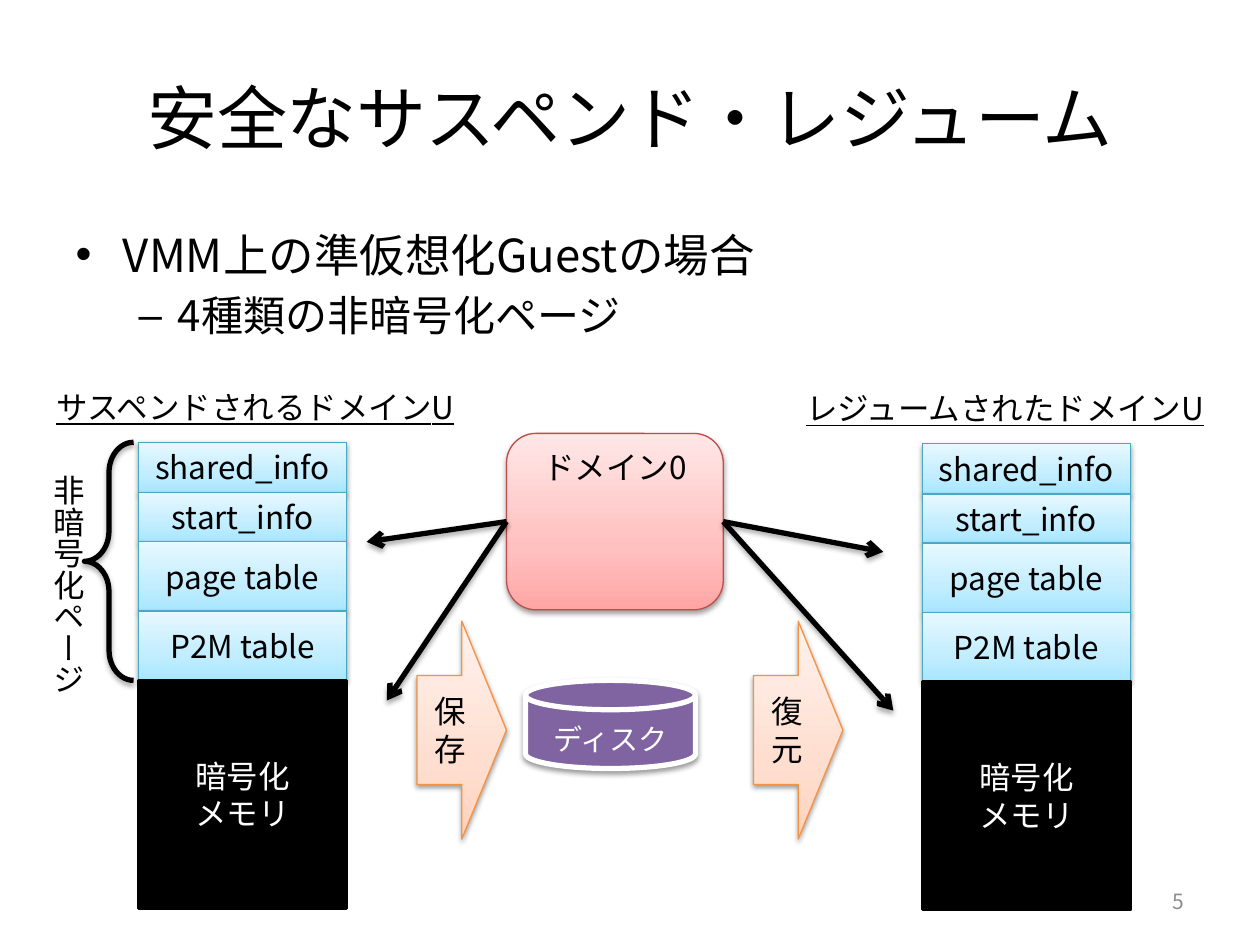
import pptx
import pptx.util
import pptx.dml.color
import pptx.enum.shapes
import pptx.enum.text
import pptx.oxml
import pptx.oxml.ns
from lxml import etree

Inches = pptx.util.Inches
Pt = pptx.util.Pt
SHAPE = pptx.enum.shapes.MSO_SHAPE
ALIGN = pptx.enum.text.PP_ALIGN
ANCHOR = pptx.enum.text.MSO_ANCHOR
qn = pptx.oxml.ns.qn

FONT = "Noto Sans CJK JP"
# Gradient stops run from bottom to top
BLUE = ("A7E6FF", "C1EDFF", "E7F8FF")
RED = ("FFA6A5", "FFC0BF", "FFE7E7")
ORANGE = ("FFD2BD", "FFDED0", "FFF2ED")
SHAPE_SHADOW = (38, 1.6)  # opacity in percent, distance in points
LINE_SHADOW = (35, 1.8)

MEMORY_ROWS = [("shared_info", 0.4), ("start_info", 0.39),
               ("page table", 0.55), ("P2M table", 0.55)]


def rgb(code):
    return pptx.dml.color.RGBColor.from_string(code)


def apply(target, values):
    for name, value in values.items():
        setattr(target, name, value)


def place(part, left, top, width, height):
    box = dict(left=left, top=top, width=width, height=height)
    apply(part, {side: Inches(length) for side, length in box.items()})


def write(paragraph, text, size=18, color="000000", align=None, underline=None):
    paragraph.text = text
    paragraph.alignment = align
    for run in paragraph.runs:
        apply(run.font, {"name": FONT, "size": Pt(size), "underline": underline})
        run.font.color.rgb = rgb(color)
        east_asian = etree.Element(qn("a:ea"), typeface=FONT)
        run.font._element.find(qn("a:latin")).addnext(east_asian)


def paint(fill, colors):
    """Fill with one colour, three gradient stops, or nothing."""
    if colors is None:
        fill.background()
    elif isinstance(colors, str):
        fill.solid()
        fill.fore_color.rgb = rgb(colors)
    else:
        fill.gradient()
        fill.gradient_angle = 90
        stops = fill._xPr.find(qn("a:gradFill")).find(qn("a:gsLst"))
        for stop in list(stops):
            stops.remove(stop)
        for position, color in zip((0, 35000, 100000), colors):
            stop = etree.SubElement(stops, qn("a:gs"), pos=str(position))
            etree.SubElement(stop, qn("a:srgbClr"), val=color)


def cast_shadow(effects, opacity, distance):
    shadow = etree.SubElement(effects, qn("a:outerShdw"), blurRad=str(Pt(3.1)),
                              dist=str(Pt(distance)), dir="5400000", rotWithShape="0")
    black = etree.SubElement(shadow, qn("a:srgbClr"), val="000000")
    etree.SubElement(black, qn("a:alpha"), val=str(opacity * 1000))


def add_block(slide, kind, box, fill, line, line_width=0.75, shadow=SHAPE_SHADOW,
              text=None, size=18, color="000000", anchor=ANCHOR.MIDDLE, insets=None):
    block = slide.shapes.add_shape(kind, *map(Inches, box))
    paint(block.fill, fill)
    block.line.color.rgb = rgb(line)
    block.line.width = Pt(line_width)
    block.shadow.inherit = False
    if shadow:
        cast_shadow(block._element.spPr.find(qn("a:effectLst")), *shadow)
    if text:
        frame = block.text_frame
        apply(frame, {"word_wrap": True, "vertical_anchor": anchor})
        apply(frame, {f"margin_{side}": Inches(gap) for side, gap in (insets or {}).items()})
        write(frame.paragraphs[0], text, size, color, ALIGN.CENTER)
    return block


def add_label(slide, box, text, wrap=False, anchor=ANCHOR.TOP, vertical=False, **style):
    frame = slide.shapes.add_textbox(*map(Inches, box)).text_frame
    apply(frame, {"word_wrap": wrap, "vertical_anchor": anchor})
    if vertical:
        frame._txBody.bodyPr.set("vert", "eaVert")
    write(frame.paragraphs[0], text, **style)


def add_arrow(slide, source, side, end):
    arrow = slide.shapes.add_connector(
        pptx.enum.shapes.MSO_CONNECTOR.STRAIGHT, 0, 0, *map(Inches, end))
    arrow.begin_connect(source, side)
    arrow.line.color.rgb = rgb("000000")
    arrow.line.width = Pt(3)
    etree.SubElement(arrow.line._get_or_add_ln(), qn("a:tailEnd"), type="arrow")
    effects = etree.SubElement(arrow._element.spPr, qn("a:effectLst"))
    cast_shadow(effects, *LINE_SHADOW)


def add_memory(slide, left, top):
    """Stack the unencrypted pages on top of the encrypted memory."""
    for name, height in MEMORY_ROWS:
        add_block(slide, SHAPE.RECTANGLE, (left, top, 1.65, height), BLUE, "46AAC5",
                  text=name)
        top += height
    add_block(slide, SHAPE.RECTANGLE, (left, top, 1.65, 1.81), "000000", "000000", 2,
              shadow=None, text="暗号化\nメモリ", color="FFFFFF")


def add_headings(slide):
    title, body = slide.placeholders
    place(title, 0, 0.3, 10, 1.25)
    title.text_frame.vertical_anchor = ANCHOR.MIDDLE
    write(title.text_frame.paragraphs[0], "安全なサスペンド・レジューム", 40,
          align=ALIGN.CENTER)

    place(body, 0.5, 1.75, 8.91, 4.95)
    case = body.text_frame.paragraphs[0]
    write(case, "VMM上の準仮想化Guestの場合", 26)
    pages = body.text_frame.add_paragraph()
    pages.level = 1
    write(pages, "4種類の非暗号化ページ", 24)

    add_label(slide, (7.17, 6.95, 2.33, 0.4), "5", wrap=True, anchor=ANCHOR.MIDDLE,
              size=12, color="8C8C8C", align=ALIGN.RIGHT)


def main():
    deck = pptx.Presentation()
    apply(deck, {"slide_width": Inches(10), "slide_height": Inches(7.5)})
    slide = deck.slides.add_slide(deck.slide_layouts[1])
    add_headings(slide)

    # Domain 0 and its access to both memories
    domain0 = add_block(slide, SHAPE.FLOWCHART_ALTERNATE_PROCESS, (4.02, 3.44, 1.72, 1.4),
                        RED, "BF4C48", text="ドメイン0", anchor=ANCHOR.TOP,
                        insets=dict(left=0.08, top=0.05, right=0.08, bottom=0.05))
    for side, end in [(3, (7.09, 5.64)), (1, (3.07, 5.56)),
                      (1, (2.91, 4.3)), (3, (7.01, 4.38))]:
        add_arrow(slide, domain0, side, end)

    # Suspended and resumed domains
    for left, top, label_left, label in [(1.1, 3.51, 0.35, "サスペンドされるドメインU"),
                                         (7.32, 3.52, 6.3, "レジュームされたドメインU")]:
        add_memory(slide, left, top)
        add_label(slide, (label_left, top - 0.48, 3.43, 0.4), label, underline=True)

    # Saving to and restoring from the disk
    add_block(slide, SHAPE.FLOWCHART_MAGNETIC_DISK, (4.17, 5.4, 1.35, 0.7), "8064A2",
              "FFFFFF", 3, text="ディスク", size=16.6, color="FFFFFF",
              insets=dict(left=0.1, top=0.12, right=0.1, bottom=0))
    for left, step in [(3.31, "保存"), (5.98, "復元")]:
        add_block(slide, SHAPE.RIGHT_ARROW, (left, 4.93, 0.71, 1.73), ORANGE, "F69240",
                  text=step)

    # Brace over the unencrypted pages
    brace = add_block(slide, SHAPE.LEFT_BRACE, (0.67, 3.51, 0.39, 1.89), None, "000000", 3,
                      shadow=LINE_SHADOW)
    brace.adjustments[0] = 0.615
    add_label(slide, (0.24, 3.67, 0.5, 1.87), "非暗号化ページ", vertical=True)

    deck.save("out.pptx")


if __name__ == "__main__":
    main()
